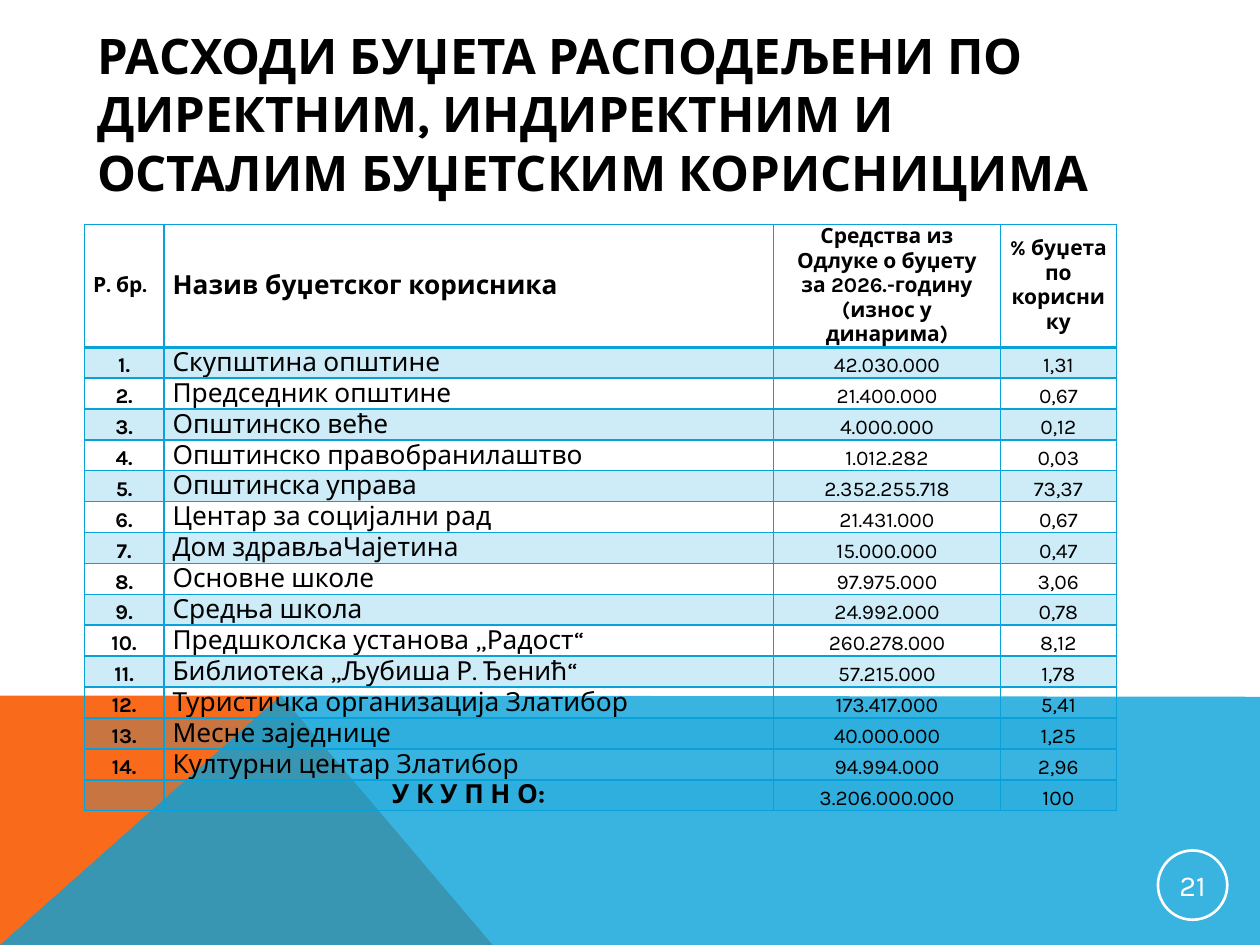
from typing import NamedTuple

from lxml.etree import SubElement
from pptx import Presentation
from pptx.dml.color import RGBColor
from pptx.enum.shapes import MSO_SHAPE
from pptx.enum.text import MSO_ANCHOR, MSO_AUTO_SIZE, PP_ALIGN
from pptx.oxml import parse_xml
from pptx.oxml.ns import nsdecls, qn
from pptx.util import Inches, Pt

FONT = "Karla"
HUES = {"blue": "08A1D9", "orange": "F96A1B", "black": "000000", "white": "FFFFFF"}
LEFT, MID = PP_ALIGN.LEFT, PP_ALIGN.CENTER


class Entry(NamedTuple):
    name: str
    funds: str
    share: str


class Style(NamedTuple):
    size: float
    bold: bool = False
    align: PP_ALIGN = MID
    hue: str = "black"


ROWS = [
    Entry("Скупштина општине", "42.030.000", "1,31"),
    Entry("Председник општине", "21.400.000", "0,67"),
    Entry("Општинско веће", "4.000.000", "0,12"),
    Entry("Општинско правобранилаштво", "1.012.282", "0,03"),
    Entry("Општинска управа", "2.352.255.718", "73,37"),
    Entry("Центар за социјални рад", "21.431.000", "0,67"),
    Entry("Дом здрављаЧајетина", "15.000.000", "0,47"),
    Entry("Основне школе", "97.975.000", "3,06"),
    Entry("Средња школа", "24.992.000", "0,78"),
    Entry("Предшколска установа „Радост“", "260.278.000", "8,12"),
    Entry("Библиотека „Љубиша Р. Ђенић“", "57.215.000", "1,78"),
    Entry("Туристичка организација Златибор", "173.417.000", "5,41"),
    Entry("Месне заједнице", "40.000.000", "1,25"),
    Entry("Културни центар Златибор", "94.994.000", "2,96"),
]
TOTAL = Entry("У К У П Н О:", "3.206.000.000", "100")
HEADS = ["Р. бр.", "Назив буџетског корисника",
         "Средства из Одлуке о буџету за 2026.-годину (износ у динарима)",
         "% буџета по кориснику"]
WIDTHS = [0.63, 4.84, 1.8, 0.92]

# Column styles for each kind of row
HEAD = [Style(12, True, LEFT), Style(15, True, LEFT), Style(12, True), Style(12, True)]
BODY = [Style(12, True), Style(15, False, LEFT), Style(12), Style(12)]
LAST = [Style(12), Style(15, True), Style(12), Style(12)]


def write(frame, text: str, style: Style) -> None:
    para = frame.paragraphs[0]
    para.alignment = style.align
    if not text:
        SubElement(para._p, qn("a:endParaRPr"), sz=str(int(style.size * 100)))
        return
    run = para.add_run()
    run.text = text
    run.font.name = FONT
    run.font.size = Pt(style.size)
    run.font.bold = style.bold
    run.font.color.rgb = RGBColor.from_string(HUES[style.hue])


def paint(fill, hue: str, alpha: int = 100) -> None:
    fill.solid()
    fill.fore_color.rgb = RGBColor.from_string(HUES[hue])
    if alpha < 100:
        color = fill._xPr.find(qn("a:solidFill"))[0]
        SubElement(color, qn("a:alpha"), val=str(alpha * 1000))


def draw_wedge(slide, points: list, hue: str, alpha: int = 100) -> None:
    spots = [(Inches(x), Inches(y)) for x, y in points]
    form = slide.shapes.build_freeform(*spots[0])
    form.add_line_segments(spots[1:], close=True)
    shape = form.convert_to_shape()
    shape.shadow.inherit = False
    shape.line.fill.background()
    paint(shape.fill, hue, alpha)


def edge(cell, top: float, base: float) -> None:
    props = cell._tc.get_or_add_tcPr()
    sides = {"L": 1, "R": 1, "T": top, "B": base}
    for spot, (side, width) in enumerate(sides.items()):
        props.insert(spot, parse_xml(
            f'<a:ln{side} {nsdecls("a")} w="{Pt(width)}"><a:solidFill>'
            f'<a:srgbClr val="{HUES["blue"]}"/></a:solidFill></a:ln{side}>'))


def fill_row(table, row: int, texts: list, styles: list) -> None:
    for col, (text, style) in enumerate(zip(texts, styles)):
        cell = table.cell(row, col)
        cell.margin_left = cell.margin_right = Inches(0.07)
        cell.margin_top = cell.margin_bottom = 0
        cell.vertical_anchor = MSO_ANCHOR.BOTTOM if row else MSO_ANCHOR.MIDDLE
        write(cell.text_frame, text, style)
        if row % 2:
            paint(cell.fill, "blue", 20)
        else:
            cell.fill.background()
        edge(cell, 2 if row == 1 else 1, 1 if row else 2)


def draw_table(slide) -> None:
    count = len(ROWS) + 2
    table = slide.shapes.add_table(count, len(WIDTHS), Inches(0.67), Inches(1.78),
                                   Inches(sum(WIDTHS)), Inches(4.05)).table
    table.horz_banding = False
    table.first_row = False
    for col, width in zip(table.columns, WIDTHS):
        col.width = Inches(width)
    for row, line in enumerate(table.rows):
        line.height = Inches(0.23 if row else 0.6)
    fill_row(table, 0, HEADS, HEAD)
    for row, entry in enumerate(ROWS, 1):
        fill_row(table, row, [f"{row}.", *entry], BODY)
    fill_row(table, count - 1, ["", *TOTAL], LAST)


def draw_badge(slide, text: str) -> None:
    badge = slide.shapes.add_shape(MSO_SHAPE.OVAL, Inches(9.19), Inches(6.75),
                                   Inches(0.55), Inches(0.55))
    badge.shadow.inherit = False
    badge.fill.background()
    badge.line.color.rgb = RGBColor.from_string(HUES["white"])
    badge.line.width = Pt(1.5)
    frame = badge.text_frame
    frame.margin_left = frame.margin_right = Inches(0.01)
    frame.margin_top = frame.margin_bottom = Inches(0.01)
    frame.vertical_anchor = MSO_ANCHOR.MIDDLE
    write(frame, text, Style(16.5, hue="white"))


def main() -> None:
    deck = Presentation()
    deck.slide_width, deck.slide_height = Inches(10), Inches(7.5)
    slide = deck.slides.add_slide(deck.slide_layouts[5])

    # Coloured base
    draw_wedge(slide, [(0, 7.5), (0, 5.52), (2.23, 5.52), (3.91, 7.5)], "orange")
    draw_wedge(slide, [(0, 7.5), (2.23, 5.52), (10, 5.53), (10, 7.5)], "blue", 80)

    # Title, raised above the base
    title = slide.shapes.title
    slide.shapes._spTree.append(title._element)
    title.left, title.top = Inches(0.67), Inches(0.6)
    title.width, title.height = Inches(8.22), Inches(0.6)
    title.text_frame.auto_size = MSO_AUTO_SIZE.NONE
    title.text_frame.word_wrap = True
    title.text_frame.vertical_anchor = MSO_ANCHOR.MIDDLE
    write(title.text_frame, "РАСХОДИ БУЏЕТА РАСПОДЕЉЕНИ ПО ДИРЕКТНИМ, "
          "ИНДИРЕКТНИМ И ОСТАЛИМ БУЏЕТСКИМ КОРИСНИЦИМА", Style(28, True, LEFT))

    # Budget table and page number
    draw_table(slide)
    draw_badge(slide, "21")
    deck.save("out.pptx")


if __name__ == "__main__":
    main()
